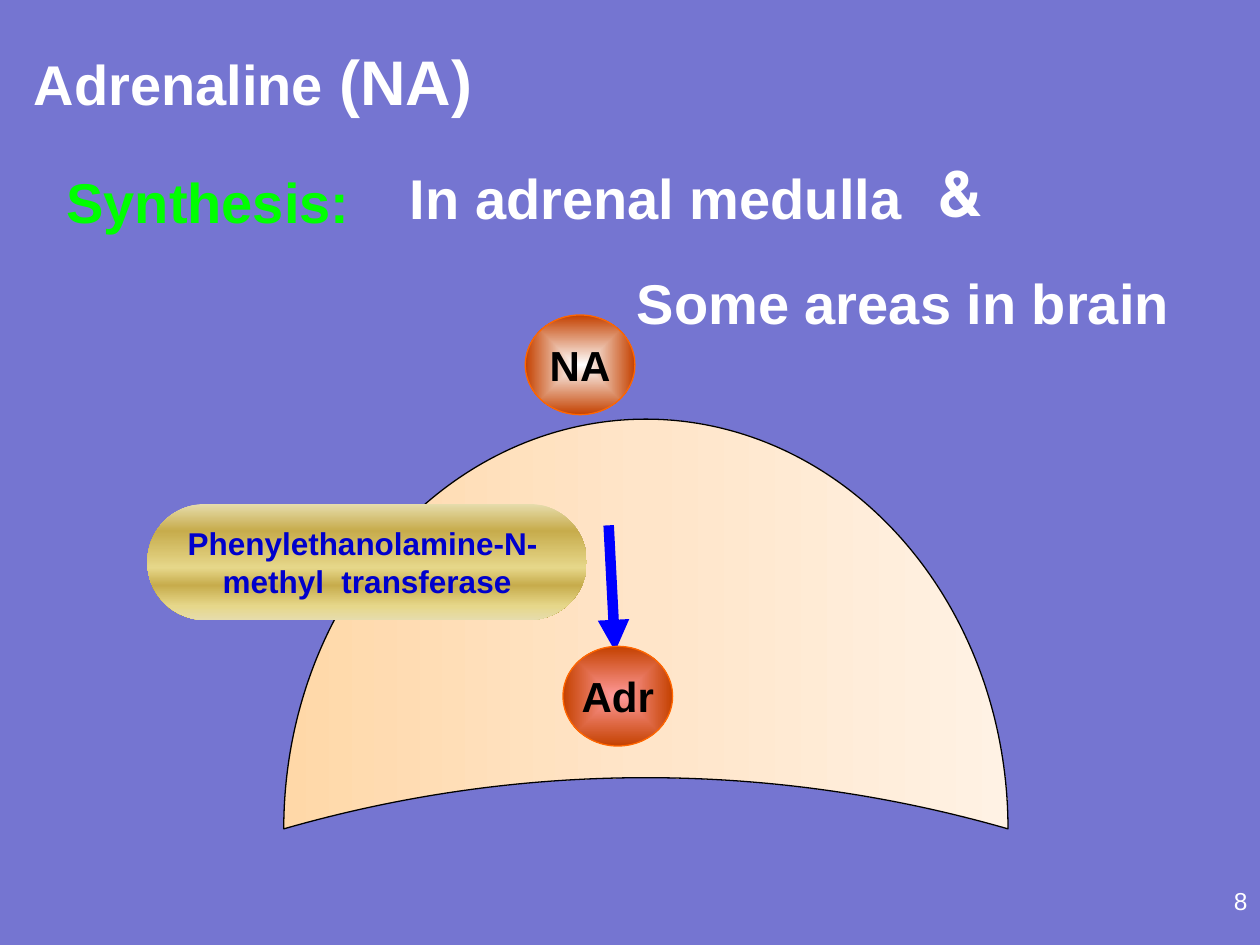
from dataclasses import dataclass

import pptx
import pptx.dml.color
import pptx.enum.shapes
import pptx.enum.text
import pptx.oxml
import pptx.oxml.ns
import pptx.util

Cm = pptx.util.Cm
Pt = pptx.util.Pt
Align = pptx.enum.text.PP_ALIGN
Anchor = pptx.enum.text.MSO_ANCHOR
Preset = pptx.enum.shapes.MSO_SHAPE
WHITE = "FFFFFF"
RADIAL = ('<a:path path="shape"><a:fillToRect l="50000" t="50000" '
          'r="50000" b="50000"/></a:path>')


@dataclass
class Span:
    text: str
    size: int = 32
    color: str = WHITE
    bold: bool = True


@dataclass
class Label:
    place: tuple
    span: Span
    align: Align = Align.LEFT
    anchor: Anchor = Anchor.TOP
    wrap: bool = False
    rtl: bool = False


@dataclass
class Transmitter:
    name: str
    left: float
    top: float
    centre_color: str


def rgb(value: str) -> pptx.dml.color.RGBColor:
    return pptx.dml.color.RGBColor.from_string(value)


def write(shape, lines: list, align, anchor, wrap=False, rtl=False) -> None:
    """Fill a shape with paragraphs, each given as a list of spans."""
    frame = shape.text_frame
    settings = {"word_wrap": wrap, "vertical_anchor": anchor,
                "auto_size": pptx.enum.text.MSO_AUTO_SIZE.NONE}
    for name, value in settings.items():
        setattr(frame, name, value)
    for index, spans in enumerate(lines):
        para = frame.add_paragraph() if index else frame.paragraphs[0]
        para.alignment = align
        if rtl:
            para._p.get_or_add_pPr().set("rtl", "1")
        for span in spans:
            run = para.add_run()
            run.text = span.text
            style = {"name": "Arial", "size": Pt(span.size), "bold": span.bold}
            for name, value in style.items():
                setattr(run.font, name, value)
            run.font.color.rgb = rgb(span.color)


def shade(shape, stops: list, direction: str) -> None:
    """Give a shape a gradient of (percent, colour) stops."""
    shape.fill.gradient()
    old = shape._element.spPr.find(pptx.oxml.ns.qn("a:gradFill"))
    marks = "".join(f'<a:gs pos="{percent * 1000}"><a:srgbClr val="{color}"/></a:gs>'
                    for percent, color in stops)
    new = pptx.oxml.parse_xml(
        f'<a:gradFill {pptx.oxml.ns.nsdecls("a")} rotWithShape="1">'
        f'<a:gsLst>{marks}</a:gsLst>{direction}</a:gradFill>')
    old.getparent().replace(old, new)


def linear(degrees: int) -> str:
    return f'<a:lin ang="{degrees * 60000}" scaled="1"/>'


def add_shaded(page, preset, place: tuple, stops: list, direction: str,
               outline: str = ""):
    shape = page.shapes.add_shape(preset, *map(Cm, place))
    shape.shadow.inherit = False
    shade(shape, stops, direction)
    if outline:
        shape.line.color.rgb = rgb(outline)
        shape.line.width = Pt(0.75)
    else:
        shape.line.fill.background()
    return shape


def add_label(page, label: Label) -> None:
    box = page.shapes.add_textbox(*map(Cm, label.place))
    write(box, [[label.span]], label.align, label.anchor, label.wrap, label.rtl)


def add_transmitter(page, item: Transmitter) -> None:
    ball = add_shaded(page, Preset.OVAL, (item.left, item.top, 2.21, 2.01),
                      [(0, item.centre_color), (100, "C44100")], RADIAL, "FF6600")
    write(ball, [[Span(item.name, 24, "000000")]], Align.CENTER, Anchor.MIDDLE)


def add_arrow(page, start: tuple, end: tuple) -> None:
    arrow = page.shapes.add_connector(pptx.enum.shapes.MSO_CONNECTOR.STRAIGHT,
                                      *map(Cm, start + end))
    arrow.line.color.rgb = rgb("0000FF")
    arrow.line.width = Pt(6)
    names = pptx.oxml.ns.nsdecls("a")
    arrow.line._get_or_add_ln().append(
        pptx.oxml.parse_xml(f'<a:tailEnd {names} type="triangle"/>'))
    arrow._element.spPr.append(pptx.oxml.parse_xml(f"<a:effectLst {names}/>"))


def main() -> None:
    deck = pptx.Presentation()
    deck.slide_width, deck.slide_height = Cm(25.4), Cm(19.05)
    page = deck.slides.add_slide(deck.slide_layouts[5])
    page.background.fill.solid()
    page.background.fill.fore_color.rgb = rgb("7575D1")

    # Title
    title = page.shapes.title
    bounds = {"left": 0.43, "top": 0.58, "width": 9.93, "height": 1.96}
    for name, value in bounds.items():
        setattr(title, name, Cm(value))
    write(title, [[Span("Adrenaline "), Span("(NA)", 36), Span(" ", 40, bold=False)]],
          Align.LEFT, Anchor.MIDDLE)

    # Places of synthesis and page number
    labels = [
        Label((19.48, 17.73, 5.92, 1.32), Span("8", 14, bold=False),
              Align.RIGHT, wrap=True),
        Label((7.62, 3.18, 10.82, 1.63), Span("In adrenal medulla "),
              Align.RIGHT, rtl=True),
        Label((12.5, 5.28, 11.33, 1.63), Span("Some areas in brain"),
              Align.RIGHT, rtl=True),
        Label((18.62, 2.97, 1.45, 1.8), Span("&", 36),
              Align.RIGHT, wrap=True, rtl=True),
        Label((1.09, 3.25, 6.53, 1.6), Span("Synthesis:", color="00FF00"),
              anchor=Anchor.MIDDLE),
    ]
    for label in labels:
        add_label(page, label)

    # Cell
    cell = add_shaded(page, Preset.MOON, (8.89, 5.28, 8.26, 14.6),
                      [(0, "FFD8A8"), (50, "FFE5C9"), (100, "FFF2E4")],
                      linear(270), "000000")
    cell.adjustments[0] = 0.875
    cell.rotation = 90

    # Conversion of NA to Adr by the enzyme
    add_transmitter(page, Transmitter("NA", 10.59, 6.35, WHITE))
    enzyme = add_shaded(page, Preset.ROUNDED_RECTANGLE, (2.97, 10.16, 8.86, 2.34),
                        [(0, "E6DCAC"), (23, "C7AC4C"), (55, "E6D78A"),
                         (70, "C7AC4C"), (88, "E6D78A"), (100, "E6DCAC")],
                        linear(90))
    enzyme.adjustments[0] = 0.5
    write(enzyme, [[Span(text, 18, "0000CC")] for text in
                   ("Phenylethanolamine-N- ", "methyl  transferase")],
          Align.CENTER, Anchor.MIDDLE)
    add_arrow(page, (12.27, 10.59), (12.4, 13.13))
    add_transmitter(page, Transmitter("Adr", 11.35, 13.03, "FF9999"))

    deck.save("out.pptx")


if __name__ == "__main__":
    main()
